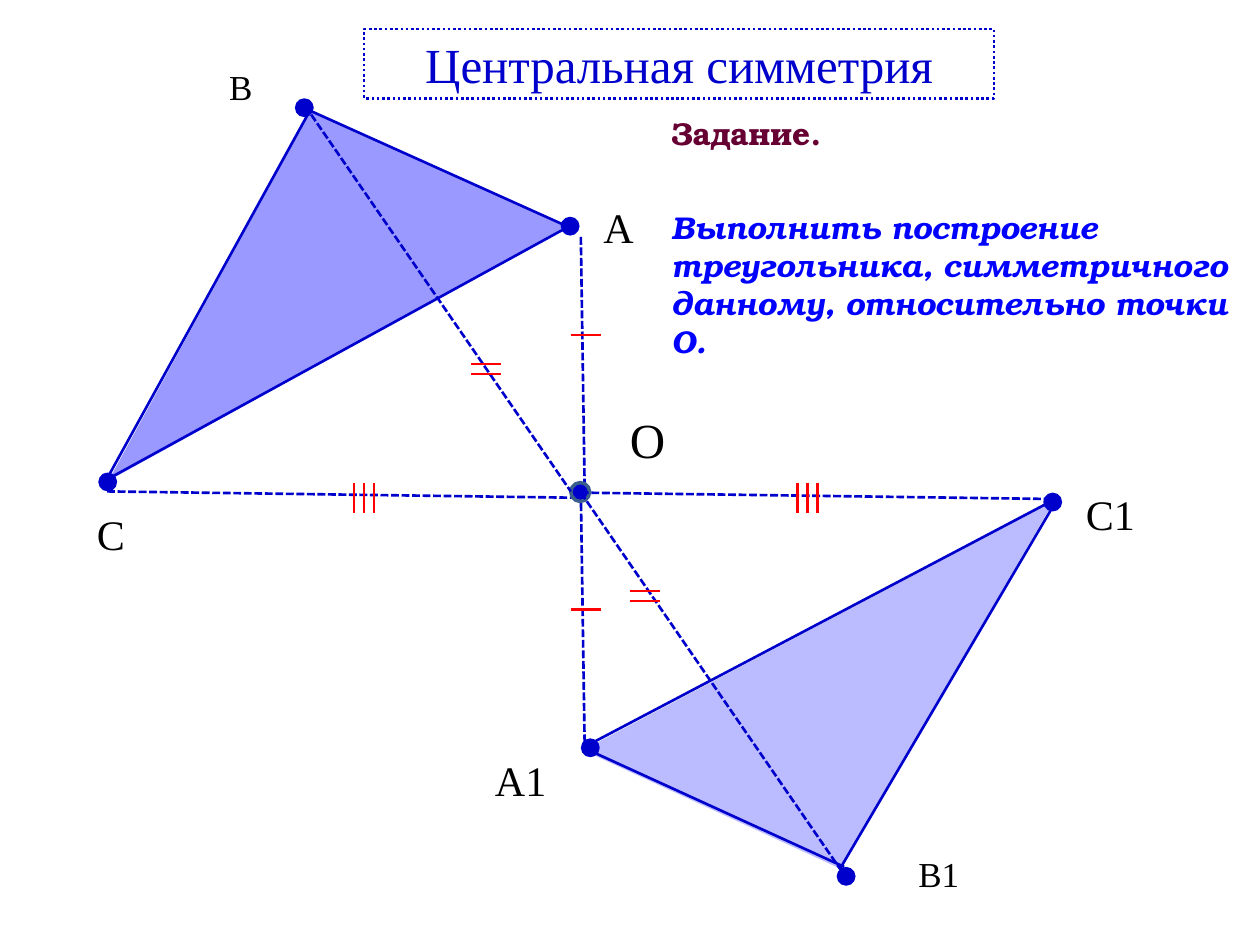
from lxml import etree
from pptx import Presentation
from pptx.dml.color import RGBColor
from pptx.enum.dml import MSO_LINE
from pptx.enum.shapes import MSO_CONNECTOR, MSO_SHAPE
from pptx.enum.text import MSO_ANCHOR, MSO_AUTO_SIZE, PP_ALIGN
from pptx.oxml.ns import qn
from pptx.util import Inches, Pt

STRAIGHT = MSO_CONNECTOR.STRAIGHT
TRIANGLE = MSO_SHAPE.ISOSCELES_TRIANGLE
OVAL = MSO_SHAPE.OVAL
RECTANGLE = MSO_SHAPE.RECTANGLE
DASH = MSO_LINE.SQUARE_DOT
DOT = MSO_LINE.ROUND_DOT
CENTER = PP_ALIGN.CENTER
LEFT = PP_ALIGN.LEFT
MIDDLE = MSO_ANCHOR.MIDDLE
GROW = MSO_AUTO_SIZE.SHAPE_TO_FIT_TEXT

SERIF = "Times New Roman"
BOOKMAN = "TeX Gyre Bonum"
BLUE = "0000CC"
RED = "FF0000"
BLACK = "000000"
POINT_SIZE = 0.15
TICK_LENGTH = 0.24
TICK_GAP = 0.08

TRIANGLES = [
    ((4.8, 4.86, 4.23, 1.79), 152.1, 66),
    ((0.17, 1.13, 4.16, 1.79), 331.1, 100),
]
LABELS = [
    ("В", (1.72, 0.47, 0.39, 0.44), 20),
    ("А", (4.69, 1.55, 0.45, 0.51), 24),
    ("С", (0.67, 3.99, 0.43, 0.51), 24),
    ("О", (4.9, 3.2, 0.48, 0.57), 28),
    ("В1", (7.19, 6.72, 0.53, 0.44), 20),
    ("А1", (3.83, 5.94, 0.61, 0.51), 24),
    ("С1", (8.52, 3.83, 0.6, 0.51), 24),
]
SIDES = [
    ((0.86, 3.8), (4.51, 1.8)),
    ((4.51, 1.8), (2.42, 0.86)),
    ((2.47, 0.86), (0.86, 3.78)),
    ((4.73, 5.88), (8.34, 3.98)),
    ((6.7, 6.88), (4.73, 5.98)),
    ((8.38, 3.98), (6.67, 6.89)),
]
RAYS_BELOW_CENTER = [
    ((4.61, 1.88), (4.64, 3.86)),
    ((4.61, 3.91), (4.64, 5.89)),
    ((0.85, 3.9), (4.55, 3.95)),
]
RAYS_ABOVE_CENTER = [
    ((4.61, 3.91), (8.31, 3.96)),
    ((2.47, 0.91), (4.53, 3.9)),
    ((4.61, 3.91), (6.67, 6.9)),
]
VERTICES = [(4.45, 1.72), (2.34, 0.78), (0.78, 3.75),
            (4.61, 5.86), (8.28, 3.91), (6.64, 6.88)]
TICKS = [
    ((4.65, 2.66), 1, False),
    ((4.65, 4.84), 1, False),
    ((3.86, 2.93), 2, False),
    ((5.12, 4.73), 2, False),
    ((2.89, 3.95), 3, True),
    ((6.41, 3.95), 3, True),
]


def color(value):
    return RGBColor.from_string(value)


def box(bounds):
    return [Inches(value) for value in bounds]


def add_figure(slide, kind, bounds, fill=None, line=None, width=1.5):
    shape = slide.shapes.add_shape(kind, *box(bounds))
    shape.shadow.inherit = False
    if fill:
        shape.fill.solid()
        shape.fill.fore_color.rgb = color(fill)
    else:
        shape.fill.background()
    if line:
        shape.line.color.rgb = color(line)
        shape.line.width = Pt(width)
    else:
        shape.line.fill.background()
    return shape


def add_triangle(slide, bounds, rotation, opacity):
    shape = add_figure(slide, TRIANGLE, bounds, "9999FF")
    shape.adjustments[0] = 0.677
    shape.rotation = rotation
    if opacity < 100:
        fill_color = next(shape.fill._xPr.iter(qn("a:srgbClr")))
        alpha = etree.SubElement(fill_color, qn("a:alpha"))
        alpha.set("val", str(opacity * 1000))


def add_point(slide, position, line=None):
    bounds = (*position, POINT_SIZE, POINT_SIZE)
    add_figure(slide, OVAL, bounds, BLUE, line, 2)


def add_segment(slide, start, end, line=BLUE, dash=None):
    connector = slide.shapes.add_connector(STRAIGHT, *box((*start, *end)))
    connector.line.color.rgb = color(line)
    connector.line.width = Pt(1.5)
    if dash:
        connector.line.dash_style = dash
    etree.SubElement(connector._element.spPr, qn("a:effectLst"))


def add_ticks(slide, center, count, vertical):
    x, y = center
    half = TICK_LENGTH / 2
    for index in range(count):
        offset = (index - (count - 1) / 2) * TICK_GAP
        if vertical:
            start, end = (x + offset, y - half), (x + offset, y + half)
        else:
            start, end = (x - half, y + offset), (x + half, y + offset)
        add_segment(slide, start, end, RED)


def write_paragraph(paragraph, text, font_color, alignment=LEFT, **font_format):
    paragraph.alignment = alignment
    run = paragraph.add_run()
    run.text = text
    run.font.color.rgb = color(font_color)
    for name, value in font_format.items():
        setattr(run.font, name, value)


def add_text_box(slide, bounds, wrap):
    frame = slide.shapes.add_textbox(*box(bounds)).text_frame
    frame.word_wrap = wrap
    frame.auto_size = GROW
    return frame


def add_label(slide, text, bounds, size):
    frame = add_text_box(slide, bounds, False)
    write_paragraph(frame.paragraphs[0], text, BLACK, name=SERIF, size=Pt(size))


def add_title(slide):
    shape = add_figure(slide, RECTANGLE, (2.89, 0.23, 5, 0.55), line=BLUE)
    shape.line.dash_style = DOT
    shape.text_frame.vertical_anchor = MIDDLE
    write_paragraph(shape.text_frame.paragraphs[0], "Центральная симметрия",
                    BLUE, CENTER, name=SERIF, size=Pt(28))


def add_task(slide):
    frame = add_text_box(slide, (5.23, 0.86, 4.77, 1.77), True)
    font_format = {"name": BOOKMAN, "size": Pt(18), "bold": True}
    write_paragraph(frame.paragraphs[0], "Задание.", "660033", **font_format)
    paragraph = frame.add_paragraph()
    paragraph.space_before = Pt(32)
    write_paragraph(
        paragraph,
        "Выполнить построение треугольника, симметричного данному, относительно точки O.",
        "0000FF", italic=True, **font_format)


def main():
    presentation = Presentation()
    presentation.slide_width = Inches(10)
    presentation.slide_height = Inches(7.5)
    slide = presentation.slides.add_slide(presentation.slide_layouts[6])
    for triangle in TRIANGLES:
        add_triangle(slide, *triangle)
    for label in LABELS:
        add_label(slide, *label)
    add_title(slide)
    for side in SIDES:
        add_segment(slide, *side)
    for ray in RAYS_BELOW_CENTER:
        add_segment(slide, *ray, dash=DASH)
    add_point(slide, (4.53, 3.83), "3A5F8C")
    for ray in RAYS_ABOVE_CENTER:
        add_segment(slide, *ray, dash=DASH)
    for vertex in VERTICES:
        add_point(slide, vertex)
    for tick in TICKS:
        add_ticks(slide, *tick)
    add_task(slide)
    presentation.save("out.pptx")


if __name__ == "__main__":
    main()
